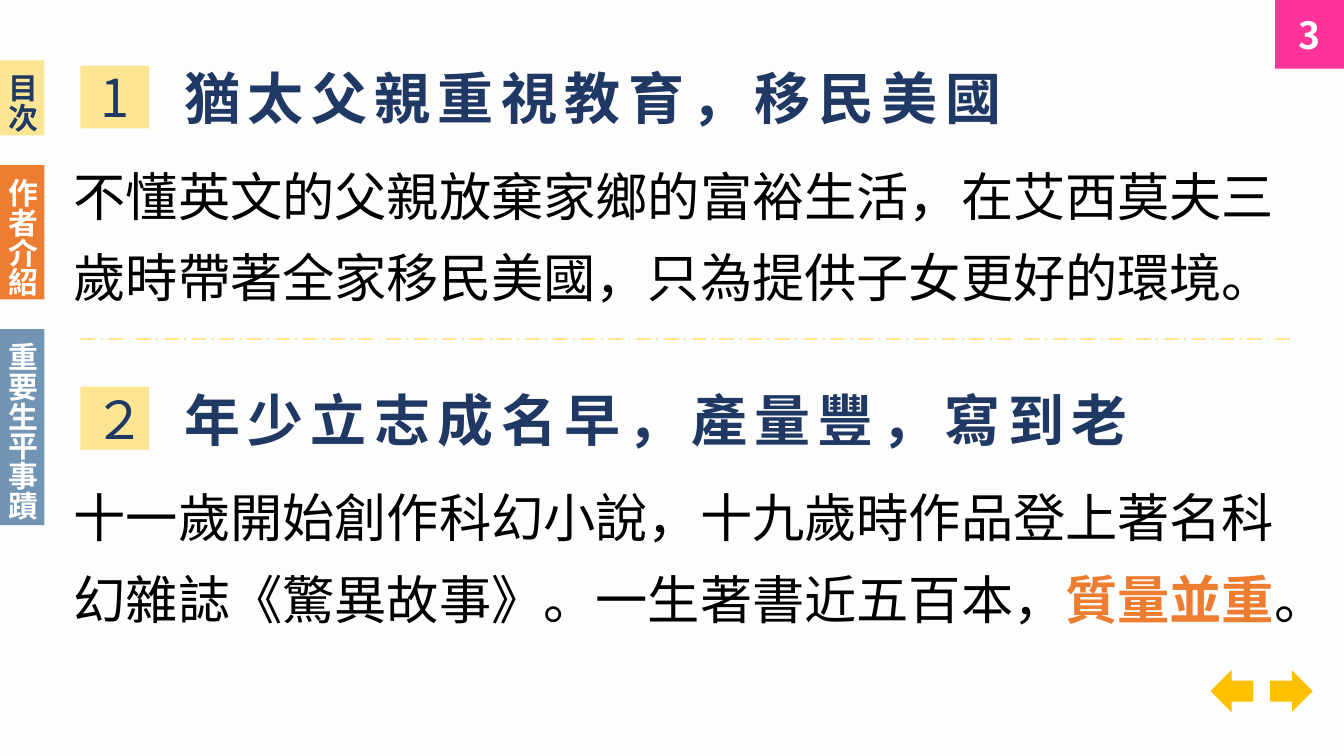
from pptx import Presentation
from pptx.dml.color import RGBColor
from pptx.enum import dml, shapes, text
from pptx.oxml import ns, xmlchemy
from pptx.util import Cm, Pt

FONT = "Noto Sans CJK SC"
PAPER = RGBColor(0xFD, 0xFD, 0xFD)
WHITE = RGBColor(0xFF, 0xFF, 0xFF)
BLACK = RGBColor(0, 0, 0)
NAVY = RGBColor(0x20, 0x38, 0x64)
CREAM = RGBColor(0xFC, 0xE6, 0x94)
ORANGE = RGBColor(0xED, 0x7D, 0x31)
STEEL = RGBColor(0x71, 0x95, 0xB3)
PINK = RGBColor(0xFF, 0x33, 0x99)
GOLD = RGBColor(0xFF, 0xC0, 0x00)

SHAPE = shapes.MSO_SHAPE
ALIGN = text.PP_ALIGN
SECTION_STEP = 6.07


def style_run(r, size, color, bold=False):
    r.font.size = Pt(size)
    r.font.bold = bold
    r.font.color.rgb = color
    r.font.name = FONT
    ea = xmlchemy.OxmlElement("a:ea")
    ea.set("typeface", FONT)
    r.font._element.find(ns.qn("a:latin")).addnext(ea)


def place(sp, x, y, w, h):
    sp.left, sp.top, sp.width, sp.height = Cm(x), Cm(y), Cm(w), Cm(h)


def add_block(s, kind, x, y, w, h, fill):
    sp = s.shapes.add_shape(kind, Cm(x), Cm(y), Cm(w), Cm(h))
    sp.shadow.inherit = False
    sp.fill.solid()
    sp.fill.fore_color.rgb = fill
    sp.line.fill.background()
    return sp


def add_label(s, x, y, w, h, fill, label, size, color, bold=True):
    sp = add_block(s, SHAPE.RECTANGLE, x, y, w, h, fill)
    tf = sp.text_frame
    tf.vertical_anchor = text.MSO_ANCHOR.MIDDLE
    tf.text = label
    p = tf.paragraphs[0]
    p.alignment = ALIGN.CENTER
    style_run(p.runs[0], size, color, bold)
    return sp


def add_side_tab(s, y, h, fill, label, color):
    sp = add_label(s, 0, y, 0.84, h, fill, label, 16, color)
    tf = sp.text_frame
    tf.word_wrap = False
    tf._txBody.bodyPr.set("vert", "eaVert")
    tf.paragraphs[0].alignment = ALIGN.LEFT


def set_heading(sp, y, label):
    place(sp, 3.23, y, 19.38, 1.55)
    tf = sp.text_frame
    tf.word_wrap = True
    tf.auto_size = text.MSO_AUTO_SIZE.NONE
    tf.vertical_anchor = text.MSO_ANCHOR.MIDDLE
    tf.text = label
    p = tf.paragraphs[0]
    p.alignment = ALIGN.LEFT
    r = p.runs[0]
    style_run(r, 30, NAVY, True)
    r.font._element.set("spc", "400")


def set_body(sp, y, parts):
    place(sp, 1.14, y, 24.18, 3.2)
    tf = sp.text_frame
    tf.word_wrap = True
    tf.auto_size = text.MSO_AUTO_SIZE.NONE
    p = tf.paragraphs[0]
    pPr = p._p.get_or_add_pPr()
    pPr.set("marL", "0")
    pPr.set("indent", "0")
    pPr.append(xmlchemy.OxmlElement("a:buNone"))
    p.line_spacing = 1.3
    p.space_before = Pt(0)
    for words, color, bold in parts:
        r = p.add_run()
        r.text = words
        style_run(r, 28, color, bold)


def add_divider(s, y):
    line = s.shapes.add_connector(
        shapes.MSO_CONNECTOR.STRAIGHT, Cm(1.52), Cm(y), Cm(24.38), Cm(y))
    line.line.color.rgb = CREAM
    line.line.width = Pt(1)
    line.line.dash_style = dml.MSO_LINE.LONG_DASH_DOT
    line._element.spPr.append(xmlchemy.OxmlElement("a:effectLst"))


def main():
    prs = Presentation()
    prs.slide_width, prs.slide_height = Cm(25.4), Cm(14.29)
    s = prs.slides.add_slide(prs.slide_layouts[3])
    s.background.fill.solid()
    s.background.fill.fore_color.rgb = PAPER

    # Page number and side navigation
    add_label(s, 24.1, 0, 1.3, 1.3, PINK, "3", 20, WHITE)
    add_side_tab(s, 1.14, 1.42, CREAM, "目次", NAVY)
    add_side_tab(s, 3.12, 2.54, ORANGE, "作者介紹", WHITE)
    add_side_tab(s, 6.22, 3.71, STEEL, "重要生平事蹟", WHITE)

    # Numbered sections: number, heading, paragraph
    title, first_body, second_body = s.placeholders
    second_heading = s.shapes.add_textbox(0, 0, 0, 0)
    sections = [
        ("1", title, "猶太父親重視教育，移民美國", first_body,
         [("不懂英文的父親放棄家鄉的富裕生活，在艾西莫夫三歲時帶著全家移民美國，"
           "只為提供子女更好的環境。", BLACK, False)]),
        ("２", second_heading, "年少立志成名早，產量豐，寫到老", second_body,
         [("十一歲開始創作科幻小說，十九歲時作品登上著名科幻雜誌《驚異故事》。"
           "一生著書近五百本，", BLACK, False),
          ("質量並重", ORANGE, True),
          ("。", BLACK, False)]),
    ]
    for i, (number, heading, label, body, parts) in enumerate(sections):
        dy = i * SECTION_STEP
        add_label(s, 1.52, 1.24 + dy, 1.3, 1.19, CREAM, number, 28, NAVY, False)
        set_heading(heading, 1.07 + dy, label)
        set_body(body, 2.62 + dy, parts)
    add_divider(s, 6.4)

    # Previous and next arrows
    add_block(s, SHAPE.LEFT_ARROW, 22.88, 12.67, 0.81, 0.79, GOLD)
    add_block(s, SHAPE.RIGHT_ARROW, 24, 12.67, 0.81, 0.79, GOLD)

    prs.save("out.pptx")


if __name__ == "__main__":
    main()
